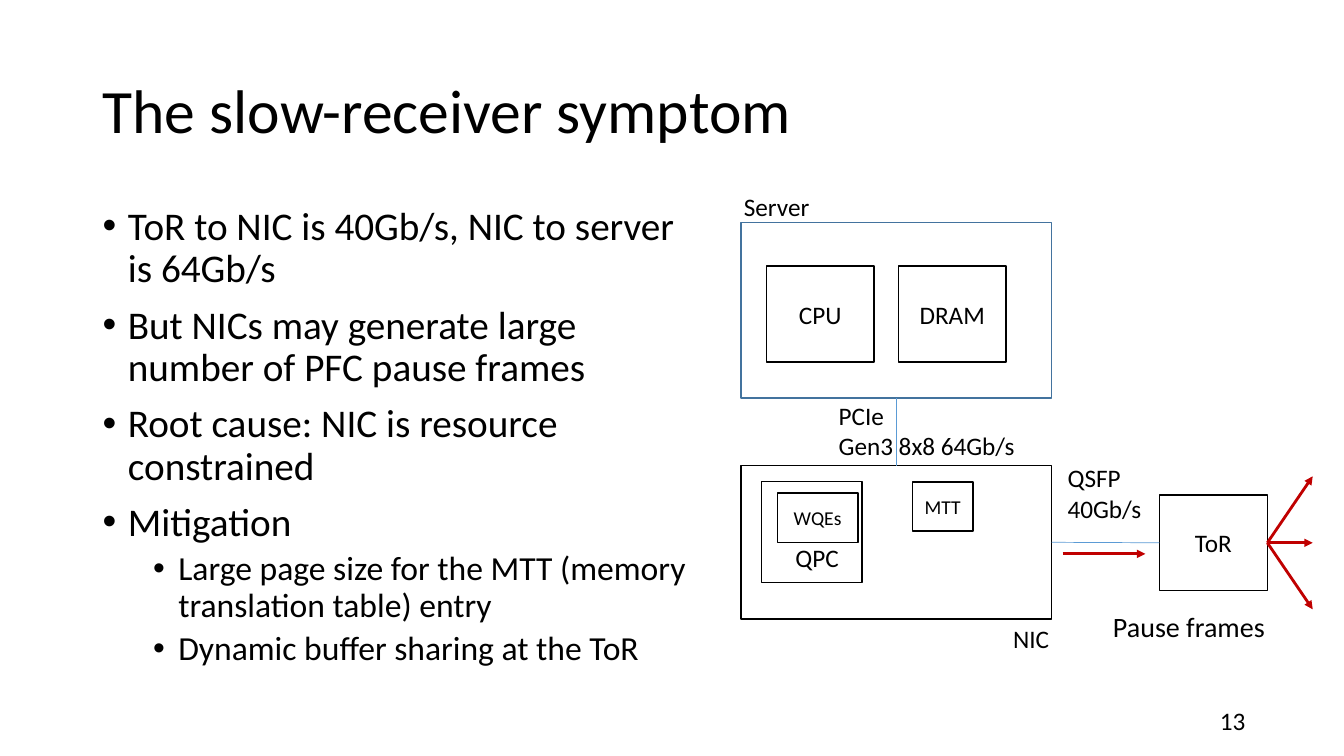
from pptx import Presentation
from pptx.dml.color import RGBColor
from pptx.enum.shapes import MSO_CONNECTOR, MSO_SHAPE
from pptx.enum.text import MSO_ANCHOR, PP_ALIGN
from pptx.oxml.ns import qn
from pptx.util import Pt
from lxml import etree

RECT = MSO_SHAPE.RECTANGLE
LINE = MSO_CONNECTOR.STRAIGHT
MID, TOP = MSO_ANCHOR.MIDDLE, MSO_ANCHOR.TOP
LEFT, CENTER = PP_ALIGN.LEFT, PP_ALIGN.CENTER
UP, DOWN, WEST, EAST = 0, 2, 1, 3
SCALE = 9144  # EMU per px, 100 px to the inch
FONT = "Calibri"
BLACK, WHITE, RED = "000000", "FFFFFF", "C00000"
BLUE, NAVY = "5B9BD5", "43739E"
POINTS = [
    ("ToR to NIC is 40Gb/s, NIC to server is 64Gb/s", 0),
    ("But NICs may generate large number of PFC pause frames", 0),
    ("Root cause: NIC is resource constrained", 0),
    ("Mitigation", 0),
    ("Large page size for the MTT (memory translation table) entry", 1),
    ("Dynamic buffer sharing at the ToR", 1),
]


def emu(*sizes):
    return [round(size * SCALE) for size in sizes]


def color(code):
    return RGBColor.from_string(code)


def write(para, text, size=18, align=LEFT, space=None, before=0):
    para.alignment = align
    para.line_spacing = space
    para.space_before = Pt(before)
    run = para.add_run()
    run.text = text
    run.font.name = FONT
    run.font.size = Pt(size)
    run.font.color.rgb = color(BLACK)


def bullet(para, left):
    props = para._p.get_or_add_pPr()
    hang = emu(25)[0]
    props.set("marL", str(emu(left)[0]))
    props.set("indent", str(-hang))
    etree.SubElement(props, qn("a:buFont"), typeface="Arial")
    etree.SubElement(props, qn("a:buChar"), char="•")


def label(slide, box, *lines, wrap=False, anchor=TOP, **style):
    frame = slide.shapes.add_textbox(*emu(*box)).text_frame
    frame.word_wrap = wrap
    frame.vertical_anchor = anchor
    for i, text in enumerate(lines):
        para = frame.add_paragraph() if i else frame.paragraphs[0]
        write(para, text, **style)
    return frame


def block(slide, box, text="", size=18, fill=WHITE, edge=BLACK):
    shape = slide.shapes.add_shape(RECT, *emu(*box))
    shape.shadow.inherit = False
    shape.fill.solid()
    shape.fill.fore_color.rgb = color(fill)
    shape.line.color.rgb = color(edge)
    shape.line.width = Pt(1)
    if text:
        shape.text_frame.vertical_anchor = MID
        write(shape.text_frame.paragraphs[0], text, size, CENTER)
    return shape


def wire(slide, start, end, tint=BLUE, width=0.5, arrow=False):
    line = slide.shapes.add_connector(LINE, *emu(*start, *end))
    line.line.color.rgb = color(tint)
    line.line.width = Pt(width)
    if arrow:
        etree.SubElement(line.line._get_or_add_ln(), qn("a:tailEnd"), type="triangle")
    etree.SubElement(line._element.spPr, qn("a:effectLst"))
    return line


def join(slide, first, side, second, other):
    line = wire(slide, (0, 0), (0, 0))
    line.begin_connect(first, side)
    line.end_connect(second, other)


def body(slide, box):
    frame = label(slide, box, wrap=True)
    for i, (text, level) in enumerate(POINTS):
        para = frame.add_paragraph() if i else frame.paragraphs[0]
        para.level = level
        write(para, text, size=28 - 4 * level, space=0.9, before=10 - 5 * level)
        bullet(para, 25 + 50 * level)


def server(slide, box):
    x, y, w, h = box
    frame = block(slide, box, edge=NAVY)
    for i, name in enumerate(("CPU", "DRAM")):
        block(slide, (x + 25 + 131 * i, y + 43, 107, 95), name)
    label(slide, (x - 7, y - 36, 86, 40), "Server")
    return frame


def nic(slide, box):
    x, y, w, h = box
    card = block(slide, box)
    block(slide, (x + 170, y + 16, 60, 49), "MTT", size=14)
    block(slide, (x + 20, y + 16, 100, 100))
    block(slide, (x + 36, y + 27, 80, 49), "WQEs", size=14)
    label(slide, (x + 44, y + 71, 64, 40), "QPC")
    label(slide, (x + w - 48, y + h - 1, 56, 40), "NIC")
    return card


def switch(slide, box):
    x, y, w, h = box
    tor = block(slide, box, "ToR")
    end, mid = x + w, y + h / 2
    for rise in (-66, 0, 66):
        ray = wire(slide, (end, mid), (end + 45, mid + rise), RED, 2, True)
        ray.begin_connect(tor, EAST)
    wire(slide, (x - 96, mid + 11), (x - 14, mid + 11), RED, 2, True)
    label(slide, (x - 56, y + 109, 173, 44), "Pause frames", size=20)
    return tor


def diagram(slide, x, y):
    host = server(slide, (x, y, 308, 174))
    card = nic(slide, (x, y + 241, 308, 152))
    tor = switch(slide, (x + 415, y + 270, 107, 95))
    join(slide, card, UP, host, DOWN)
    join(slide, card, EAST, tor, WEST)
    label(slide, (x + 87, y + 171, 197, 71), "PCIe", "Gen3 8x8 64Gb/s")
    label(slide, (x + 314, y + 233, 94, 71), "QSFP", "40Gb/s")


def main():
    deck = Presentation()
    deck.slide_width, deck.slide_height = emu(1333, 750)
    slide = deck.slides.add_slide(deck.slide_layouts[6])
    label(slide, (92, 40, 1150, 145), "The slow-receiver symptom",
          wrap=True, anchor=MID, size=44, space=0.9)
    body(slide, (92, 200, 611, 476))
    diagram(slide, 735, 221)
    label(slide, (1200, 695, 50, 40), "13")
    deck.save("out.pptx")


if __name__ == "__main__":
    main()
